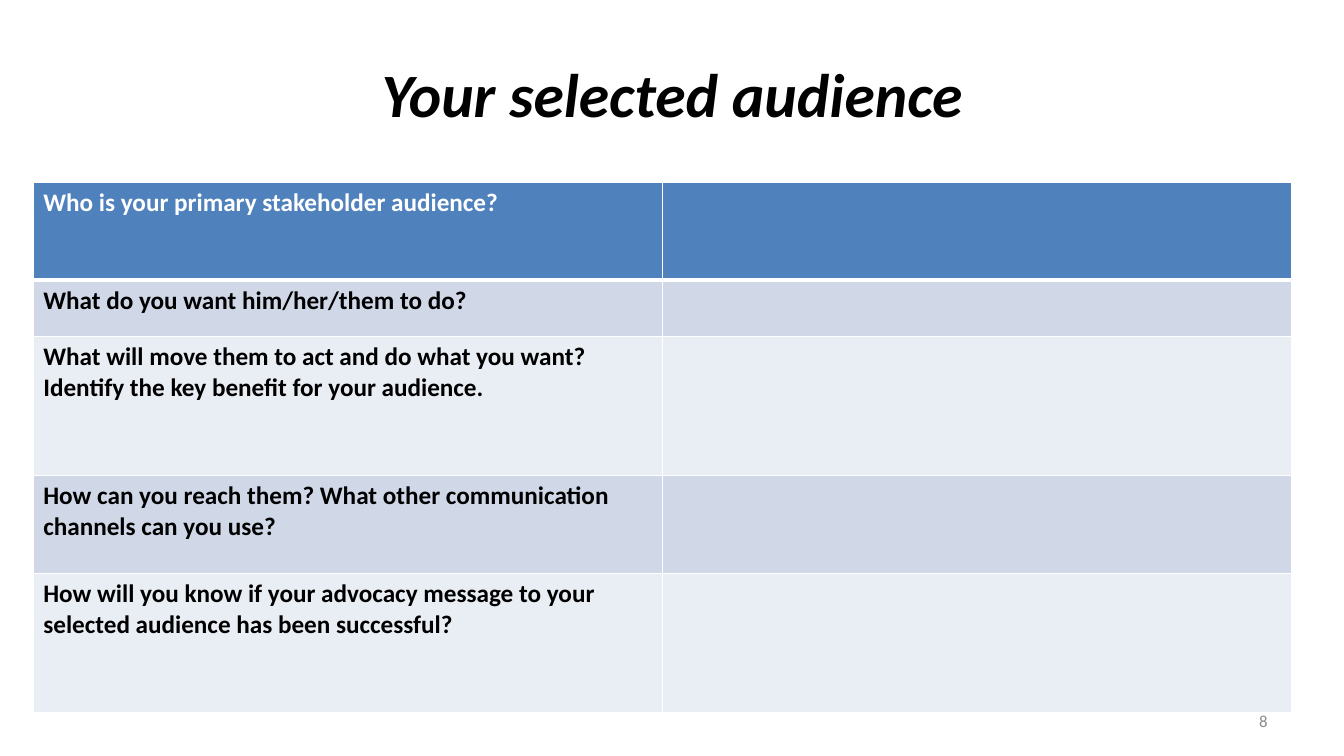
from pptx import Presentation
from pptx.dml.color import RGBColor
from pptx.enum.text import MSO_ANCHOR, PP_ALIGN
from pptx.oxml import parse_xml
from pptx.oxml.ns import nsdecls
from pptx.util import Inches, Pt

TITLE = "Your selected audience"
PAGE_NUMBER = "8"
QUESTIONS = [
    ("Who is your primary stakeholder audience?", 0.97),
    ("What do you want him/her/them to do?", 0.56),
    ("What will move them to act and do what you want? "
     "Identify the key benefit for your audience.", 1.38),
    ("How can you reach them? What other communication channels can you use?", 0.97),
    ("How will you know if your advocacy message to your "
     "selected audience has been successful?", 1.38),
]
COLUMN_WIDTH = 6.24

THEME = {
    "font": "Calibri",
    "header": "4F81BD",
    "bands": ["E9EDF4", "D0D8E8"],
    "border": "FFFFFF",
    "title": {"size": 44, "color": "000000", "bold": True, "italic": True},
    "number": {"size": 12, "color": "8C8C8C"},
    "heading": {"size": 18, "color": "FFFFFF", "bold": True},
    "question": {"size": 18, "color": "000000", "bold": True},
}


def write(frame, text, style, align):
    para = frame.paragraphs[0]
    para.alignment = align
    span = para.add_run()
    span.text = text
    formats = {"name": THEME["font"], "size": Pt(style["size"]),
               "bold": style.get("bold", False), "italic": style.get("italic", False)}
    for name, value in formats.items():
        setattr(span.font, name, value)
    span.font.color.rgb = RGBColor.from_string(style["color"])


def add_text(page, place, text, style, align):
    box = page.shapes.add_textbox(*map(Inches, place))
    frame = box.text_frame
    frame.word_wrap = True
    frame.vertical_anchor = MSO_ANCHOR.MIDDLE
    write(frame, text, style, align)


def paint_cell(cell, color, bottom_width):
    properties = cell._tc.get_or_add_tcPr()
    for side, width in {"L": 1, "R": 1, "T": 1, "B": bottom_width}.items():
        properties.append(parse_xml(
            f'<a:ln{side} {nsdecls("a")} w="{Pt(width)}"><a:solidFill>'
            f'<a:srgbClr val="{THEME["border"]}"/></a:solidFill></a:ln{side}>'))
    cell.fill.solid()
    cell.fill.fore_color.rgb = RGBColor.from_string(color)


def add_questions(page):
    height = sum(row_height for _, row_height in QUESTIONS)
    place = (0.33, 1.81, 2 * COLUMN_WIDTH, height)
    table = page.shapes.add_table(len(QUESTIONS), 2, *map(Inches, place)).table
    for column in table.columns:
        column.width = Inches(COLUMN_WIDTH)
    for index, (question, row_height) in enumerate(QUESTIONS):
        row = table.rows[index]
        row.height = Inches(row_height)
        is_header = index == 0
        color = THEME["header"] if is_header else THEME["bands"][index % 2]
        for cell in row.cells:
            paint_cell(cell, color, 3 if is_header else 1)
        style = THEME["heading" if is_header else "question"]
        write(row.cells[0].text_frame, question, style, PP_ALIGN.LEFT)


def main():
    deck = Presentation()
    deck.slide_width, deck.slide_height = Inches(13.33), Inches(7.5)
    page = deck.slides.add_slide(deck.slide_layouts[6])
    add_text(page, (0.67, 0.3, 12, 1.25), TITLE, THEME["title"], PP_ALIGN.CENTER)
    add_text(page, (9.56, 6.95, 3.11, 0.4), PAGE_NUMBER, THEME["number"], PP_ALIGN.RIGHT)
    add_questions(page)
    deck.save("out.pptx")


if __name__ == "__main__":
    main()
